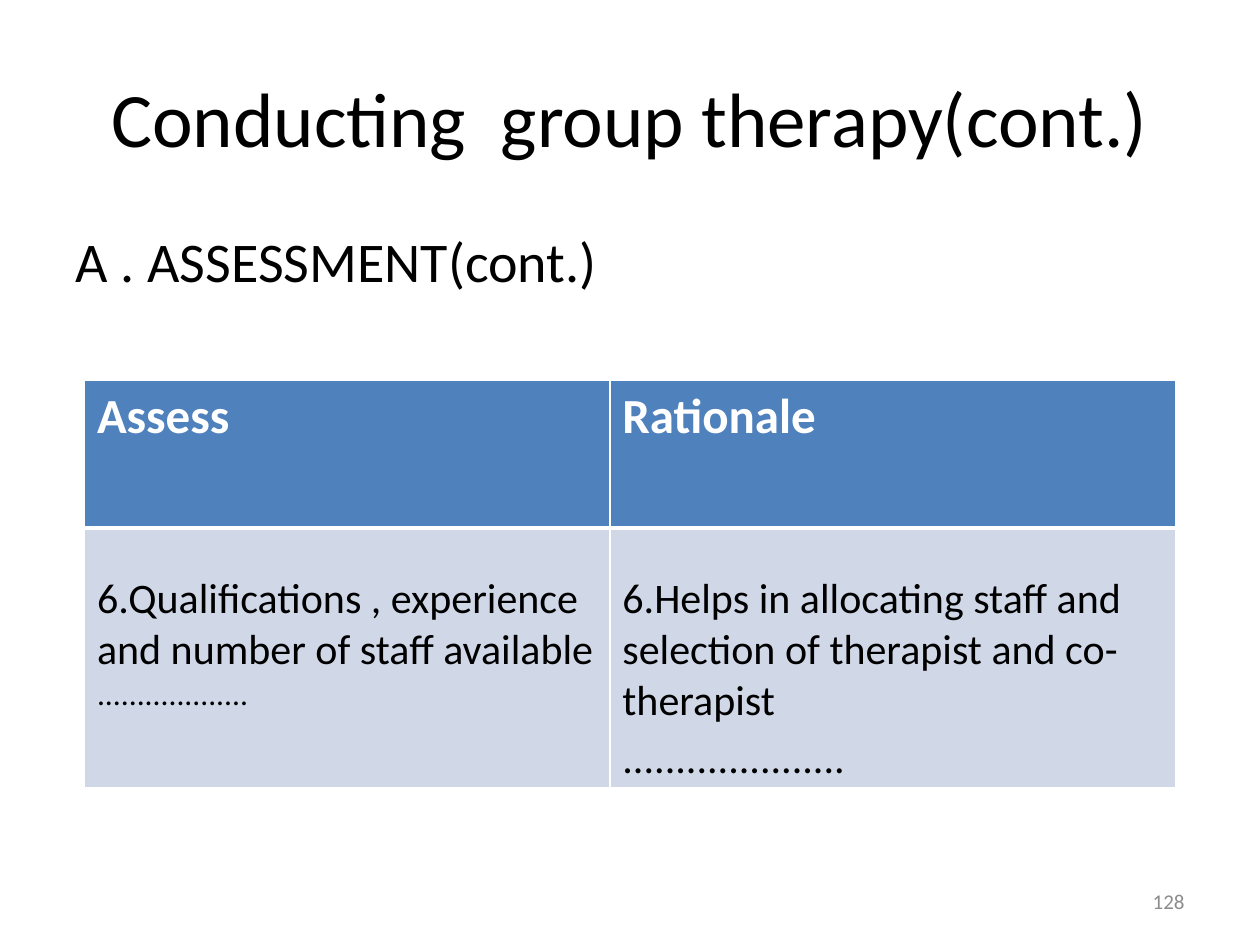
"""Build the group therapy assessment slide."""
from dataclasses import dataclass

from lxml.etree import SubElement
from pptx import Presentation
from pptx.dml.color import RGBColor
from pptx.enum.text import MSO_ANCHOR, PP_ALIGN
from pptx.oxml import parse_xml
from pptx.oxml.ns import nsdecls, qn
from pptx.util import Inches, Pt

BLACK = RGBColor(0x00, 0x00, 0x00)
WHITE = RGBColor(0xFF, 0xFF, 0xFF)
GRAY = RGBColor(0x8C, 0x8C, 0x8C)
BLUE = RGBColor(0x4F, 0x81, 0xBD)
PALE_BLUE = RGBColor(0xD0, 0xD8, 0xE8)
FONT = "Calibri"


@dataclass
class Line:
    text: str
    size: int
    space_before: int = 0


@dataclass
class RowStyle:
    height: float
    fill: RGBColor
    color: RGBColor
    bold: bool
    top_margin: float
    borders: dict[str, int]


HEADER = RowStyle(1.17, BLUE, WHITE, True, 0.05, {"L": 1, "R": 1, "T": 1, "B": 3})
DETAIL = RowStyle(2.0, PALE_BLUE, BLACK, False, 0.36, {"L": 1, "R": 1, "T": 3, "B": 1})
COLUMN_WIDTHS = (4.17, 4.49)
ROWS = (
    (HEADER, ([Line("Assess", 28)], [Line("Rationale", 28)])),
    (DETAIL, (
        [Line("6.Qualifications , experience and number of staff available", 24),
         Line("...................", 18)],
        [Line("6.Helps in allocating staff and selection of therapist and co-therapist", 24),
         Line(".....................", 24, 4)],
    )),
)


def place(shape, left: float, top: float, width: float, height: float) -> None:
    shape.left, shape.top = Inches(left), Inches(top)
    shape.width, shape.height = Inches(width), Inches(height)


def write(para, line: Line, color: RGBColor, bold: bool = False) -> None:
    para.text = line.text
    para.space_before = Pt(line.space_before)
    for span in para.runs:
        span.font.name, span.font.size = FONT, Pt(line.size)
        span.font.color.rgb, span.font.bold = color, bold


def set_borders(cell, widths: dict[str, int]) -> None:
    properties = cell._tc.get_or_add_tcPr()
    for index, (side, width) in enumerate(widths.items()):
        border = parse_xml(
            f'<a:ln{side} {nsdecls("a")} w="{Pt(width)}"><a:solidFill>'
            f'<a:srgbClr val="{WHITE}"/></a:solidFill></a:ln{side}>')
        properties.insert(index, border)


def fill_cell(cell, lines: list[Line], style: RowStyle) -> None:
    cell.fill.solid()
    cell.fill.fore_color.rgb = style.fill
    cell.margin_top = Inches(style.top_margin)
    set_borders(cell, style.borders)
    frame = cell.text_frame
    for index, line in enumerate(lines):
        para = frame.add_paragraph() if index else frame.paragraphs[0]
        write(para, line, style.color, style.bold)


def add_assessment_table(page) -> None:
    height = sum(style.height for style, _ in ROWS)
    table = page.shapes.add_table(
        len(ROWS), len(COLUMN_WIDTHS), Inches(0.67), Inches(3.02),
        Inches(sum(COLUMN_WIDTHS)), Inches(height)).table
    for column, width in zip(table.columns, COLUMN_WIDTHS):
        column.width = Inches(width)
    for row, (style, contents) in zip(table.rows, ROWS):
        row.height = Inches(style.height)
        for cell, lines in zip(row.cells, contents):
            fill_cell(cell, lines, style)


def add_headings(page) -> None:
    title, body = page.placeholders
    place(title, 0.5, 0.3, 9, 1.25)
    title.text_frame.vertical_anchor = MSO_ANCHOR.MIDDLE
    heading = title.text_frame.paragraphs[0]
    write(heading, Line("Conducting  group therapy(cont.)", 44), BLACK)
    heading.alignment = PP_ALIGN.CENTER

    place(body, 0.5, 1.75, 9, 4.95)
    section = body.text_frame.paragraphs[0]
    write(section, Line("A . ASSESSMENT(cont.)", 32), BLACK)
    properties = section._p.get_or_add_pPr()
    properties.set("marL", str(Inches(0.38)))
    properties.set("indent", str(Inches(-0.38)))
    SubElement(properties, qn("a:buNone"))


def add_page_number(page) -> None:
    box = page.shapes.add_textbox(Inches(7.17), Inches(6.95), Inches(2.33), Inches(0.4))
    frame = box.text_frame
    frame.word_wrap = True
    frame.vertical_anchor = MSO_ANCHOR.MIDDLE
    write(frame.paragraphs[0], Line("128", 12), GRAY)
    frame.paragraphs[0].alignment = PP_ALIGN.RIGHT


def main() -> None:
    deck = Presentation()
    deck.slide_width, deck.slide_height = Inches(10), Inches(7.5)
    page = deck.slides.add_slide(deck.slide_layouts[1])
    add_headings(page)
    add_page_number(page)
    add_assessment_table(page)
    deck.save("out.pptx")


if __name__ == "__main__":
    main()
